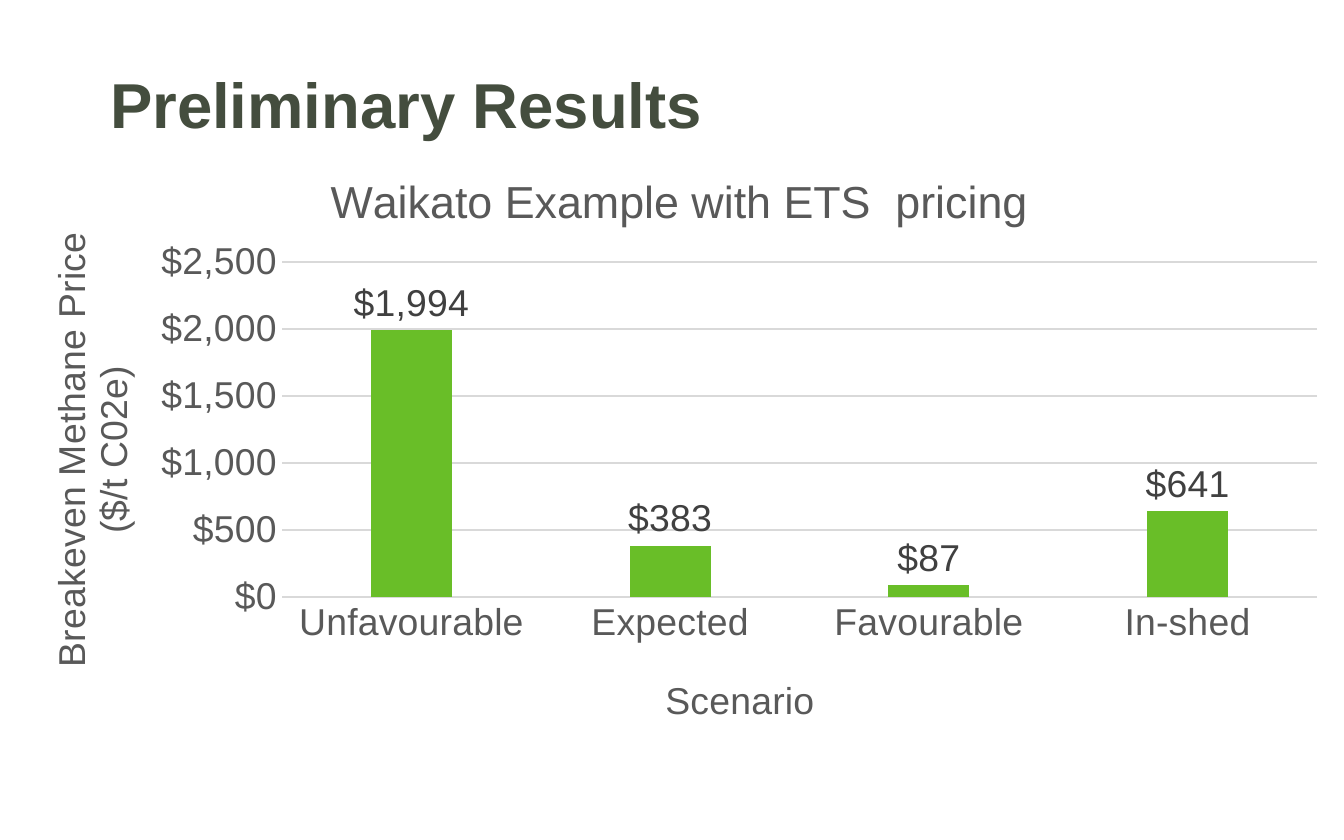
import dataclasses

import pptx
import pptx.chart.data
import pptx.dml.color
import pptx.enum.chart
import pptx.enum.text
import pptx.oxml
import pptx.oxml.ns
import pptx.util

Pt = pptx.util.Pt
qn = pptx.oxml.ns.qn


@dataclasses.dataclass(frozen=True)
class Theme:
    """Colours, font and type sizes of the slide."""
    font: str = "Arial"
    heading: str = "444D3E"
    axis: str = "595959"
    label: str = "404040"
    grid: str = "D9D9D9"
    bar: str = "69BE28"
    heading_size: int = 34
    chart_title_size: int = 24
    body_size: int = 20


THEME = Theme()
PRICE_FORMAT = '"$"#,##0'
BREAKEVEN_PRICES = {"Unfavourable": 1994, "Expected": 383, "Favourable": 87, "In-shed": 641}


def rgb(value):
    """Turn a hex string into a colour."""
    return pptx.dml.color.RGBColor.from_string(value)


def style_font(font, size, color, bold=False):
    """Apply the theme font with a size, colour and weight."""
    font.name = THEME.font
    font.size = Pt(size)
    font.bold = bold
    font.color.rgb = rgb(color)


def write_text(frame, text, size=THEME.body_size, color=THEME.axis, bold=False, align=None, spacing=None):
    """Write one formatted paragraph into a text frame."""
    frame.text = text
    paragraph = frame.paragraphs[0]
    paragraph.alignment = align
    paragraph.line_spacing = spacing
    style_font(paragraph.font, size, color, bold)
    style_font(paragraph.runs[0].font, size, color, bold)


def place(owner, **fractions):
    """Fix a chart part at fractions of the chart area."""
    layout = owner.find(qn("c:layout"))
    if layout is None:
        layout = pptx.oxml.parse_xml('<c:layout %s/>' % pptx.oxml.ns.nsdecls("c"))
        text = owner.find(qn("c:tx"))
        owner.insert(0 if text is None else 1, layout)
    for child in list(layout):
        layout.remove(child)
    manual = layout.makeelement(qn("c:manualLayout"), {})
    layout.append(manual)
    settings = {"xMode": "edge", "yMode": "edge", **fractions}
    if "w" in fractions:
        settings = {"layoutTarget": "inner", **settings}
    for name, value in settings.items():
        manual.append(manual.makeelement(qn("c:" + name), {"val": str(value)}))


def style_axis(axis, title, x, y):
    """Format an axis and place its title."""
    axis.major_tick_mark = pptx.enum.chart.XL_TICK_MARK.NONE
    axis.minor_tick_mark = pptx.enum.chart.XL_TICK_MARK.NONE
    style_font(axis.tick_labels.font, THEME.body_size, THEME.axis)
    write_text(axis.axis_title.text_frame, title)
    place(axis.axis_title._element, x=x, y=y)


def style_line(line):
    """Draw a thin grid-coloured line."""
    line.color.rgb = rgb(THEME.grid)
    line.width = Pt(0.75)


def add_heading(slide, text):
    """Move and fill the title placeholder."""
    heading = slide.shapes.title
    heading.left, heading.top, heading.width, heading.height = Pt(51.84), Pt(35.28), Pt(612), Pt(44.64)
    heading.text_frame.vertical_anchor = pptx.enum.text.MSO_ANCHOR.MIDDLE
    write_text(heading.text_frame, text, size=THEME.heading_size, color=THEME.heading,
               bold=True, align=pptx.enum.text.PP_ALIGN.LEFT, spacing=0.9)


def add_price_chart(slide, title, prices):
    """Add the column chart of breakeven prices by scenario."""
    price_data = pptx.chart.data.CategoryChartData(number_format=PRICE_FORMAT)
    price_data.categories = list(prices)
    price_data.add_series("Series 1", list(prices.values()))
    chart = slide.shapes.add_chart(pptx.enum.chart.XL_CHART_TYPE.COLUMN_CLUSTERED,
                                   Pt(0), Pt(72), Pt(720), Pt(326.16), price_data).chart
    chart.has_legend = False
    style_font(chart.font, THEME.body_size, "000000")
    write_text(chart.chart_title.text_frame, title, size=THEME.chart_title_size)
    place(chart.chart_title._element, x=0.24, y=0.05)
    place(chart._chartSpace.find(".//" + qn("c:plotArea")), x=0.21, y=0.21, w=0.77, h=0.55)

    scenarios, price_axis = chart.category_axis, chart.value_axis
    style_axis(scenarios, "Scenario", x=0.49, y=0.88)
    style_line(scenarios.format.line)
    style_axis(price_axis, "Breakeven Methane Price ($/t C02e)", x=0.03, y=0.15)
    rotation = price_axis.axis_title._element.find(".//" + qn("a:bodyPr"))
    rotation.set("rot", "-5400000")
    rotation.set("vert", "horz")
    price_axis.minimum_scale, price_axis.maximum_scale, price_axis.major_unit = 0, 2500, 500
    price_axis.tick_labels.number_format = PRICE_FORMAT
    price_axis.tick_labels.number_format_is_linked = False
    price_axis.format.line.fill.background()
    style_line(price_axis.major_gridlines.format.line)

    columns = chart.plots[0]
    columns.gap_width, columns.overlap, columns.vary_by_categories = 219, -27, False
    bars = columns.series[0]
    bars.format.fill.solid()
    bars.format.fill.fore_color.rgb = rgb(THEME.bar)
    labels = bars.data_labels
    labels.show_value = True
    labels.position = pptx.enum.chart.XL_LABEL_POSITION.OUTSIDE_END
    labels.number_format = PRICE_FORMAT
    labels.number_format_is_linked = False
    style_font(labels.font, THEME.body_size, THEME.label)


def main():
    """Build and save the slide."""
    deck = pptx.Presentation()
    deck.slide_width, deck.slide_height = Pt(720), Pt(450)
    slide = deck.slides.add_slide(deck.slide_layouts[5])
    add_heading(slide, "Preliminary Results")
    add_price_chart(slide, "Waikato Example with ETS  pricing", BREAKEVEN_PRICES)
    deck.save("out.pptx")


if __name__ == "__main__":
    main()
